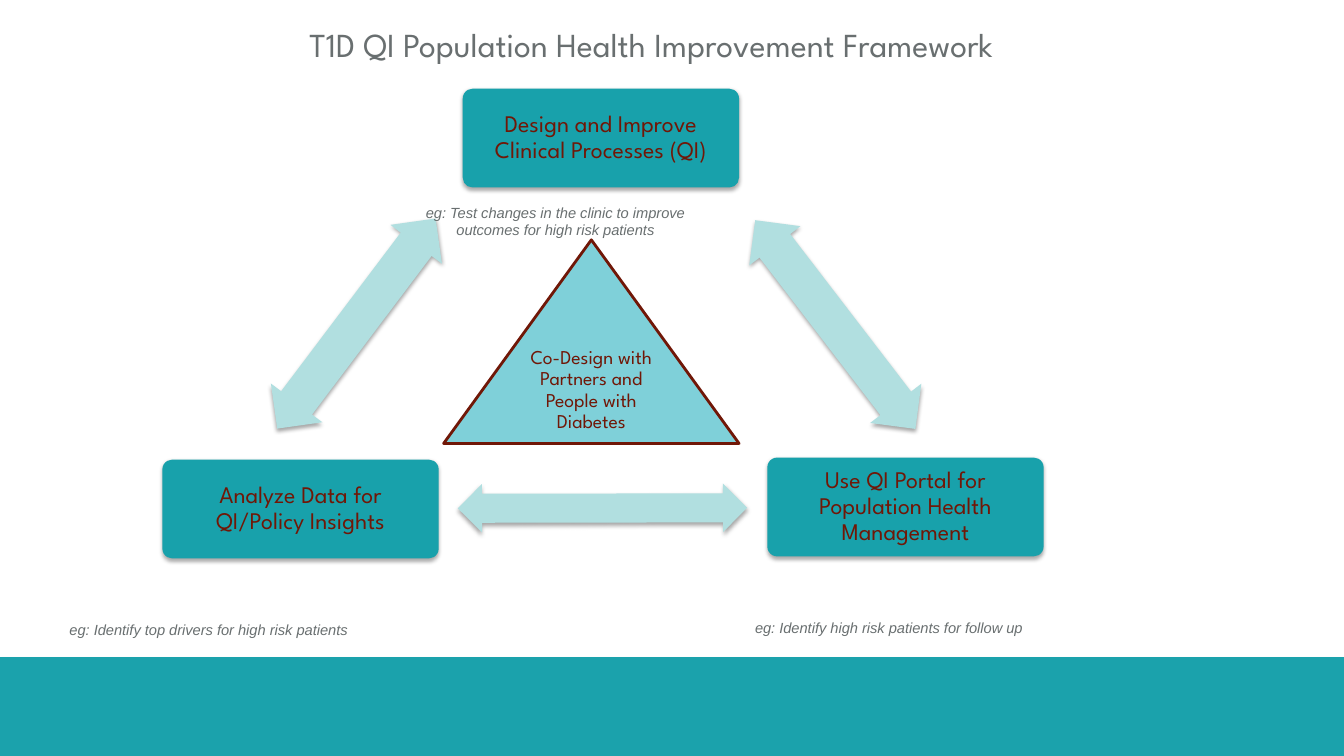
"""Build the T1D QI population health improvement framework slide."""
from lxml import etree
from pptx import Presentation
from pptx import util as u
from pptx.dml.color import RGBColor
from pptx.enum import shapes, text
from pptx.oxml import ns

TEAL = RGBColor(0x18, 0xA1, 0xAB)
BAND_TEAL = RGBColor(0x1B, 0xA2, 0xAC)
SKY = RGBColor(0x7F, 0xD0, 0xD9)
PALE = RGBColor(0xB1, 0xDF, 0xE0)
MAROON = RGBColor(0x70, 0x17, 0x07)
GREY = RGBColor(0x69, 0x6F, 0x70)
HEADING_FONT = "League Spartan"
KIND = shapes.MSO_SHAPE

deck = Presentation()
deck.slide_width, deck.slide_height = u.Inches(13.33), u.Inches(7.5)
COL, ROW = deck.slide_width / 100, deck.slide_height / 100
page = deck.slides.add_slide(deck.slide_layouts[5])


def add_figure(kind, left, top, width, height, fill, shadow=True):
    """Add a filled shape placed in hundredths of the slide's size."""
    figure = page.shapes.add_shape(kind, int(left * COL), int(top * ROW),
                                   int(width * COL), int(height * ROW))
    figure.fill.solid()
    figure.fill.fore_color.rgb = fill
    figure.line.fill.background()
    figure.shadow.inherit = False
    if shadow:
        effects = figure._element.spPr.find(ns.qn("a:effectLst"))
        outer = etree.SubElement(effects, ns.qn("a:outerShdw"), blurRad=str(u.Pt(3)),
                                 dist=str(u.Pt(1.8)), dir="5400000", rotWithShape="0")
        black = etree.SubElement(outer, ns.qn("a:srgbClr"), val="000000")
        etree.SubElement(black, ns.qn("a:alpha"), val="35000")
    return figure


def write(box, words, size, colour, font=HEADING_FONT, align=text.PP_ALIGN.CENTER,
          anchor=text.MSO_ANCHOR.TOP, spacing=1.0, italic=False):
    """Fill a shape with one formatted paragraph."""
    frame = box.text_frame
    frame.word_wrap = True
    frame.auto_size = text.MSO_AUTO_SIZE.NONE
    frame.vertical_anchor = anchor
    para = frame.paragraphs[0]
    para.text = words
    para.alignment = align
    para.line_spacing = spacing
    para.font.name, para.font.size = font, u.Pt(size)
    para.font.color.rgb = colour
    para.font.italic = italic


add_figure(KIND.RECTANGLE, 0, 86.93, 100, 13.07, BAND_TEAL)

title = page.shapes.title
title.left, title.top = int(15.9 * COL), int(2.53 * ROW)
title.width, title.height = int(65.12 * COL), int(6.67 * ROW)
write(title, "T1D QI Population Health Improvement Framework", 24, GREY)

triangle = add_figure(KIND.ISOSCELES_TRIANGLE, 33.01, 31.73, 21.98, 26.93, SKY, shadow=False)
triangle.line.color.rgb = MAROON
triangle.line.width = u.Pt(2)
frame = triangle.text_frame
frame.margin_left = frame.margin_right = u.Inches(0.06)
frame.margin_top = frame.margin_bottom = u.Inches(0.06)
write(triangle, "Co-Design with Partners and People with Diabetes", 14, MAROON, spacing=0.9)

steps = [
    (34.43, 11.73, "Design and Improve Clinical Processes (QI)"),
    (57.09, 60.53, "Use QI Portal for Population Health Management"),
    (12.08, 60.8, "Analyze Data for QI/Policy Insights"),
]
for left, top, words in steps:
    step = add_figure(KIND.ROUNDED_RECTANGLE, left, top, 20.56, 13.07, TEAL)
    step.adjustments[0] = 0.1
    write(step, words, 17, MAROON, anchor=text.MSO_ANCHOR.MIDDLE, spacing=0.9)

arrows = [
    (52.36, 38.67, 19.58, 8.53, 52.5),
    (34.06, 64, 21.53, 6.4, 179.9),
    (16.73, 38.53, 19.58, 8.53, 307),
]
for left, top, width, height, angle in arrows:
    arrow = add_figure(KIND.LEFT_RIGHT_ARROW, left, top, width, height, PALE)
    arrow.adjustments[0], arrow.adjustments[1] = 0.6, 0.5
    arrow.rotation = angle

captions = [
    (55.44, 81.2, 23.93, 3.47, text.PP_ALIGN.LEFT,
     "eg: Identify high risk patients for follow up"),
    (4.43, 81.47, 24.76, 3.33, text.PP_ALIGN.LEFT,
     "eg: Identify top drivers for high risk patients"),
    (29.18, 26.27, 24.31, 5.6, text.PP_ALIGN.CENTER,
     "eg: Test changes in the clinic to improve outcomes for high risk patients"),
]
for left, top, width, height, align, words in captions:
    caption = page.shapes.add_textbox(int(left * COL), int(top * ROW),
                                      int(width * COL), int(height * ROW))
    write(caption, words, 10.5, GREY, font="Arial", align=align, italic=True)

deck.save("out.pptx")
